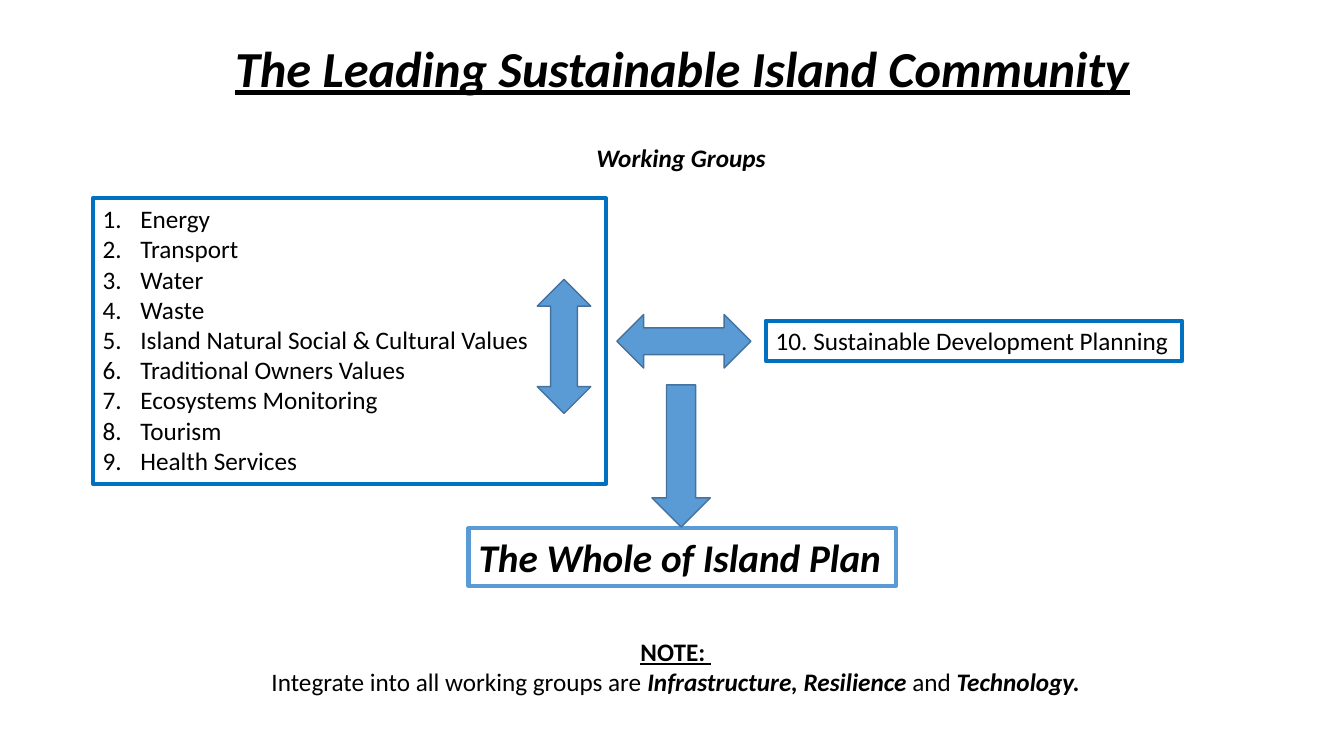
from lxml.etree import SubElement
from pptx import Presentation
from pptx.dml.color import RGBColor
from pptx.enum.shapes import MSO_SHAPE
from pptx.enum.text import MSO_ANCHOR, MSO_AUTO_SIZE, PP_ALIGN
from pptx.oxml.ns import qn
from pptx.util import Cm, Pt

COLORS = {"text": "000000", "border": "0070C0", "arrow": "5B9BD5", "arrow_line": "43739E"}
WORKING_GROUPS = [
    "Energy",
    "Transport",
    "Water",
    "Waste",
    "Island Natural Social & Cultural Values",
    "Traditional Owners Values",
    "Ecosystems Monitoring",
    "Tourism",
    "Health Services",
]


def rgb(name):
    return RGBColor.from_string(COLORS[name])


def write(tf, paragraphs, size, align=PP_ALIGN.LEFT):
    for i, runs in enumerate(paragraphs):
        p = tf.paragraphs[0] if i == 0 else tf.add_paragraph()
        p.alignment = align
        for text, style in runs:
            r = p.add_run()
            r.text = text
            r.font.name = "Calibri"
            r.font.size = Pt(size)
            r.font.color.rgb = rgb("text")
            r.font.bold = "b" in style
            r.font.italic = "i" in style
            r.font.underline = "u" in style


prs = Presentation()
prs.slide_width, prs.slide_height = Cm(33.87), Cm(19.05)
s = prs.slides.add_slide(prs.slide_layouts[5])

title = s.shapes.title
title.left, title.top, title.width, title.height = Cm(4.9), Cm(0.71), Cm(24.59), Cm(2.18)
tf = title.text_frame
tf.word_wrap = True
tf.auto_size = MSO_AUTO_SIZE.NONE
tf.vertical_anchor = MSO_ANCHOR.MIDDLE
write(tf, [[("The Leading Sustainable Island Community", "biu")]], 36, PP_ALIGN.CENTER)
tf.paragraphs[0].line_spacing = 0.9

note = [
    [("NOTE:", "bu"), (" ", "u")],
    [
        ("Integrate into all working groups are ", ""),
        ("Infrastructure, Resilience ", "bi"),
        ("and ", ""),
        ("Technology.", "bi"),
    ],
]
boxes = [
    (2.34, 5, 12.93, 7.19, [[(g, "")] for g in WORKING_GROUPS], 18, PP_ALIGN.LEFT, "border", True),
    (11.81, 13.31, 10.77, 1.45, [[("The Whole of Island Plan", "bi")]], 28, PP_ALIGN.LEFT, "arrow", False),
    (14.78, 3.45, 4.83, 1.02, [[("Working Groups", "bi")]], 18, PP_ALIGN.LEFT, None, False),
    (6.55, 15.9, 20.96, 1.8, note, 18, PP_ALIGN.CENTER, None, False),
    (19.3, 8.08, 10.49, 1.02, [[("10. Sustainable Development Planning", "")]], 18, PP_ALIGN.LEFT, "border", True),
]
frames = []
for x, y, w, h, paragraphs, size, align, line, wrap in boxes:
    sp = s.shapes.add_textbox(Cm(x), Cm(y), Cm(w), Cm(h))
    if line:
        sp.line.color.rgb = rgb(line)
        sp.line.width = Pt(3)
    tf = sp.text_frame
    tf.word_wrap = wrap
    tf.auto_size = MSO_AUTO_SIZE.SHAPE_TO_FIT_TEXT
    write(tf, paragraphs, size, align)
    frames.append(tf)

for p in frames[0].paragraphs:
    pPr = p._p.get_or_add_pPr()
    pPr.set("marL", str(Cm(0.95)))
    pPr.set("indent", str(-Cm(0.95)))
    SubElement(pPr, qn("a:buFont"), typeface="+mj-lt")
    SubElement(pPr, qn("a:buAutoNum"), type="arabicPeriod")

arrows = [
    (MSO_SHAPE.UP_DOWN_ARROW, 13.54, 7.04, 1.35, 3.38, 0),
    (MSO_SHAPE.UP_DOWN_ARROW, 16.56, 6.91, 1.35, 3.38, 90),
    (MSO_SHAPE.DOWN_ARROW, 16.43, 9.7, 1.47, 3.58, 0),
]
for kind, x, y, w, h, rotation in arrows:
    sp = s.shapes.add_shape(kind, Cm(x), Cm(y), Cm(w), Cm(h))
    sp.rotation = rotation
    sp.shadow.inherit = False
    sp.fill.solid()
    sp.fill.fore_color.rgb = rgb("arrow")
    sp.line.color.rgb = rgb("arrow_line")
    sp.line.width = Pt(1)

prs.save("out.pptx")
